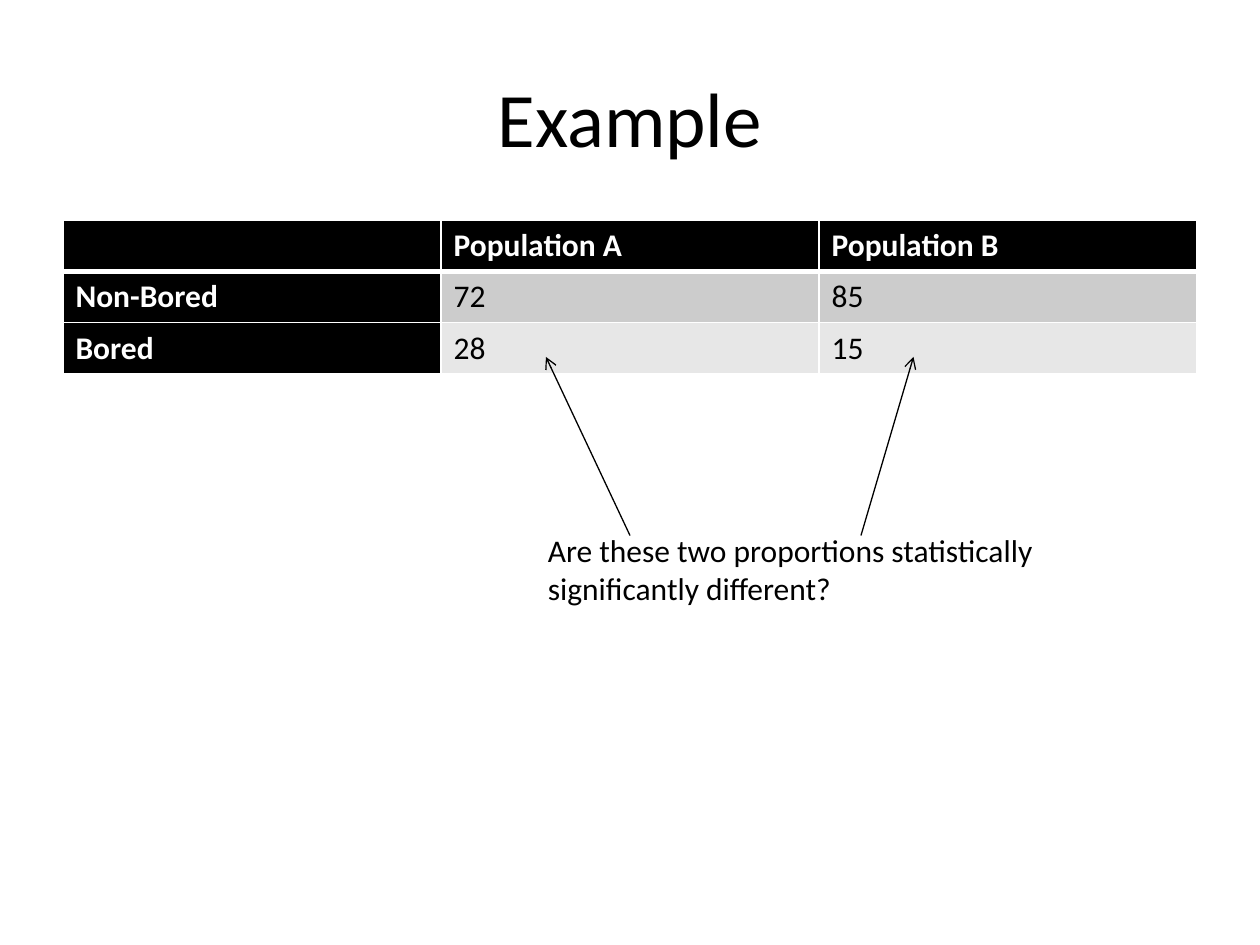
from lxml.etree import SubElement
from pptx import Presentation
from pptx.dml.color import RGBColor
from pptx.enum.shapes import MSO_CONNECTOR as Connector
from pptx.enum.text import MSO_ANCHOR as Anchor, PP_ALIGN as Align
from pptx.oxml.ns import qn
from pptx.util import Pt

BLACK, WHITE = "000000", "FFFFFF"
BANDS = ["CCCCCC", "E7E7E7"]


def color(code):
    return RGBColor.from_string(code)


class SlideBuilder:
    font_name = "Calibri"
    body_size = 18

    def __init__(self, slide):
        self.shapes = slide.shapes

    def style(self, paragraph, size, ink, bold=False):
        font = paragraph.font
        font.name, font.size, font.bold = self.font_name, Pt(size), bold
        font.color.rgb = color(ink)

    def text(self, box, words, size, anchor=Anchor.TOP, align=Align.LEFT):
        frame = self.shapes.add_textbox(*map(Pt, box)).text_frame
        frame.word_wrap = True
        frame.vertical_anchor = anchor
        frame.text = words
        paragraph = frame.paragraphs[0]
        paragraph.alignment = align
        self.style(paragraph, size, BLACK)

    def border(self, cell, side, width):
        properties = cell._tc.get_or_add_tcPr()
        line = SubElement(properties, qn(f"a:ln{side}"), w=str(Pt(width)))
        fill = SubElement(line, qn("a:solidFill"))
        SubElement(fill, qn("a:srgbClr"), val=WHITE)

    def table(self, left, top, column_width, row_height, rows):
        columns = len(rows[0])
        table = self.shapes.add_table(
            len(rows), columns, Pt(left), Pt(top),
            Pt(column_width * columns), Pt(row_height * len(rows))).table
        for r, row in enumerate(rows):
            for c, words in enumerate(row):
                cell = table.cell(r, c)
                heading = r == 0 or c == 0
                cell.text = words
                self.style(cell.text_frame.paragraphs[0], self.body_size,
                           WHITE if heading else BLACK, heading)
                widths = {"L": 1, "R": 1, "T": 3 if r == 1 else 1, "B": 3 if r == 0 else 1}
                for side, width in widths.items():
                    self.border(cell, side, width)
                cell.fill.solid()
                cell.fill.fore_color.rgb = color(BLACK if heading else BANDS[r - 1])

    def arrow(self, start, end):
        arrow = self.shapes.add_connector(Connector.STRAIGHT, *map(Pt, start + end))
        arrow.line.color.rgb = color(BLACK)
        arrow.line.width = Pt(0.75)
        SubElement(arrow.line._get_or_add_ln(), qn("a:tailEnd"), type="arrow")
        SubElement(arrow._element.spPr, qn("a:effectLst"))


def main():
    deck = Presentation()
    deck.slide_width, deck.slide_height = Pt(720), Pt(540)
    builder = SlideBuilder(deck.slides.add_slide(deck.slide_layouts[6]))

    builder.text((36, 21.6, 648, 90), "Example", 44, Anchor.MIDDLE, Align.CENTER)
    builder.table(36, 126, 216, 29.2, [
        ["", "Population A", "Population B"],
        ["Non-Bored", "72", "85"],
        ["Bored", "28", "15"],
    ])
    builder.text((306, 300, 300, 51),
                 "Are these two proportions statistically significantly different?",
                 builder.body_size)
    builder.arrow((360, 306), (312, 204))
    builder.arrow((492, 306), (522, 204))

    deck.save("out.pptx")


if __name__ == "__main__":
    main()
